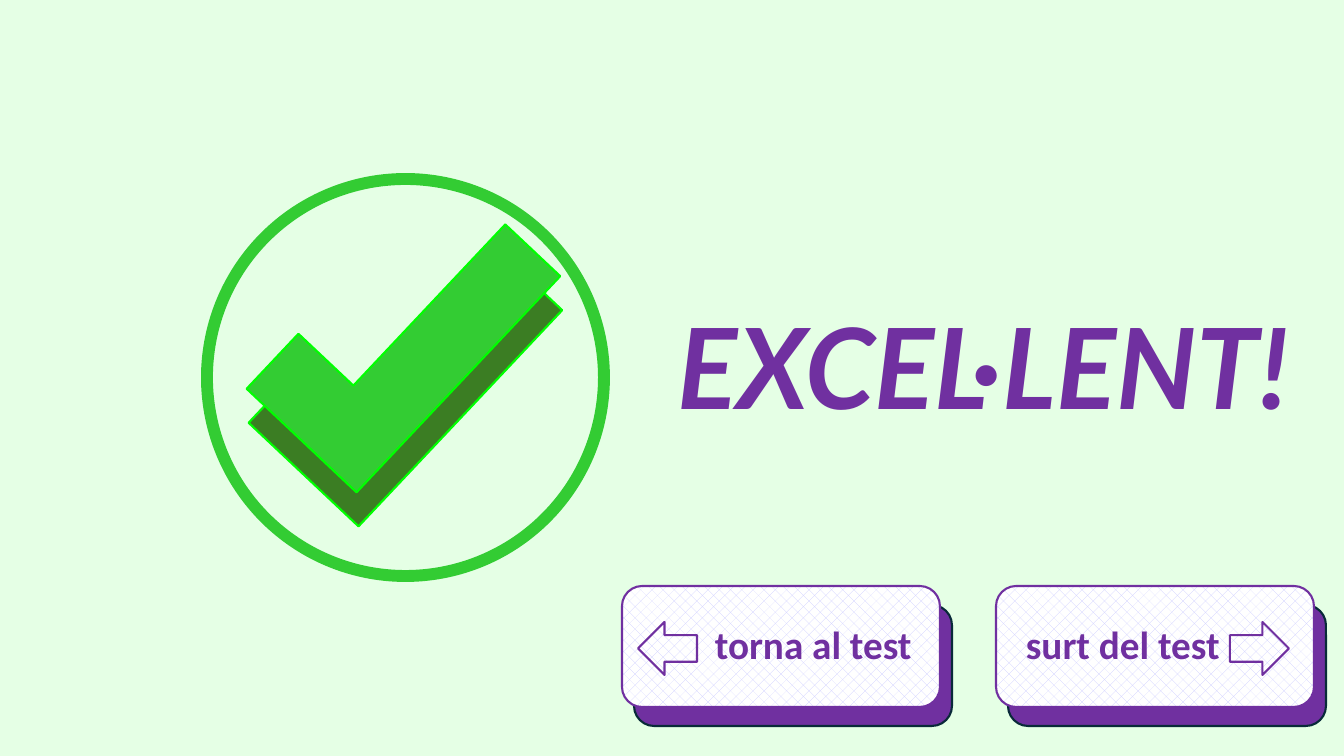
from lxml import etree
from pptx import Presentation
from pptx.dml.color import RGBColor
from pptx.enum.dml import MSO_PATTERN
from pptx.enum.shapes import MSO_SHAPE
from pptx.enum.text import MSO_ANCHOR, PP_ALIGN
from pptx.oxml.ns import qn
from pptx.util import Pt

PIXEL = 914400 / 100.8
ROUNDED = MSO_SHAPE.ROUNDED_RECTANGLE
CORNER = MSO_SHAPE.CORNER
CONNECTOR_CIRCLE = MSO_SHAPE.FLOWCHART_CONNECTOR
LEFT_ARROW = MSO_SHAPE.LEFT_ARROW
PERCENT_25 = MSO_PATTERN.PERCENT_25
MIDDLE = MSO_ANCHOR.MIDDLE
LEFT = PP_ALIGN.LEFT
CENTER = PP_ALIGN.CENTER

THEME = {
    "background": RGBColor.from_string("E5FFE5"),
    "purple": RGBColor.from_string("7030A0"),
    "navy": RGBColor.from_string("092A39"),
    "green": RGBColor.from_string("33CC33"),
    "dark_green": RGBColor.from_string("3B7D23"),
    "bright_green": RGBColor.from_string("00FF00"),
    "lavender": RGBColor.from_string("CCCCFF"),
    "white": RGBColor.from_string("FFFFFF"),
    "title": {"name": "Lato", "size": Pt(80), "bold": True, "italic": True},
    "button": {"name": "Calibri", "size": Pt(28), "bold": True},
}


def add_outlined(kind, box, fill, line, width=1.5, rotation=0, flip=False):
    shape = slide.shapes.add_shape(kind, *[round(value * PIXEL) for value in box])
    shape.shadow.inherit = False
    if fill:
        shape.fill.solid()
        shape.fill.fore_color.rgb = THEME[fill]
    else:
        shape.fill.background()
    shape.line.color.rgb = THEME[line]
    shape.line.width = Pt(width)
    shape.rotation = rotation
    if flip:
        shape._element.spPr.find(qn("a:xfrm")).set("flipH", "1")
    return shape


def write_text(shape, text, style, alignment, frame_format):
    frame = shape.text_frame
    for name, value in frame_format.items():
        setattr(frame, name, value)
    paragraph = frame.paragraphs[0]
    paragraph.alignment = alignment
    run = paragraph.add_run()
    run.text = text
    for name, value in THEME[style].items():
        setattr(run.font, name, value)
    run.font.color.rgb = THEME["purple"]
    return paragraph


presentation = Presentation()
presentation.slide_width = round(1344 * PIXEL)
presentation.slide_height = round(756 * PIXEL)
slide = presentation.slides.add_slide(presentation.slide_layouts[6])
slide.background.fill.solid()
slide.background.fill.fore_color.rgb = THEME["background"]

add_outlined(CORNER, (330, 218, 151, 297), "dark_green", "bright_green", rotation=43.3, flip=True)
add_outlined(CONNECTOR_CIRCLE, (207, 179, 397, 397), None, "green", width=8.5)
add_outlined(CORNER, (328, 184, 151, 297), "green", "bright_green", rotation=43.3, flip=True)

BUTTON_TOP, BUTTON_WIDTH, BUTTON_HEIGHT = 586, 318, 121
SHADE_RIGHT, SHADE_DOWN = 12, 19
BUTTONS = [
    ("torna al test", 622, 87, 16, False),
    ("surt del test", 996, 24, 234, True),
]
for label, left, text_inset, arrow_inset, points_right in BUTTONS:
    size = (BUTTON_WIDTH, BUTTON_HEIGHT)
    add_outlined(ROUNDED, (left + SHADE_RIGHT, BUTTON_TOP + SHADE_DOWN, *size), "purple", "navy")
    button = add_outlined(ROUNDED, (left, BUTTON_TOP, *size), "white", "purple")
    button.fill.patterned()
    button.fill.pattern = PERCENT_25
    button.fill.fore_color.rgb = THEME["lavender"]
    button.fill.back_color.rgb = THEME["white"]
    button_format = {
        "word_wrap": True,
        "vertical_anchor": MIDDLE,
        "margin_left": round(text_inset * PIXEL),
        "margin_right": 0,
    }
    paragraph = write_text(button, label, "button", LEFT, button_format)
    paragraph.line_spacing = 0.9
    paragraph.space_before = Pt(10)
    add_outlined(LEFT_ARROW, (left + arrow_inset, 622, 59, 53), None, "purple", flip=points_right)

title = slide.shapes.add_textbox(*[round(value * PIXEL) for value in (629, 293, 709, 146)])
paragraph = write_text(title, "EXCEL∙LENT!", "title", CENTER, {"word_wrap": False})
outline = etree.Element(qn("a:ln"), w=str(Pt(1)))
outline_fill = etree.SubElement(outline, qn("a:solidFill"))
etree.SubElement(outline_fill, qn("a:srgbClr"), val=str(THEME["purple"]))
paragraph.runs[0].font._element.insert(0, outline)

presentation.save("out.pptx")
